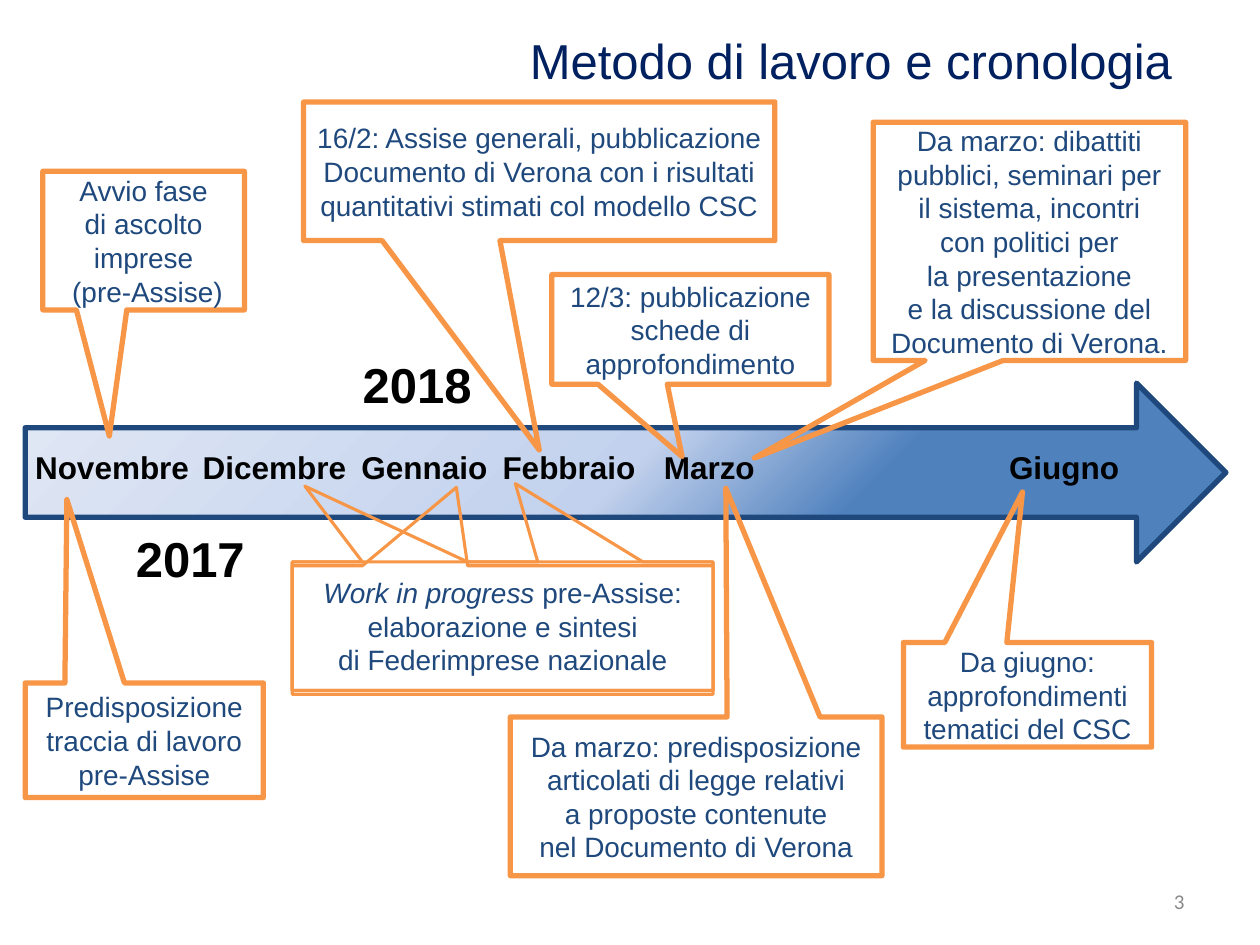
from lxml.etree import SubElement
from pptx import Presentation
from pptx.dml.color import RGBColor
from pptx.enum.shapes import MSO_SHAPE as Shape
from pptx.enum.text import MSO_ANCHOR as Anchor, PP_ALIGN as Align
from pptx.oxml.ns import qn
from pptx.util import Inches, Pt

COLORS = {
    "title": "002060", "text": "1F497D", "callout": "F79646", "black": "000000",
    "number": "898989", "arrow": "4F81BD", "middle": "C2D1ED", "pale": "E1E8F5",
}
GRADIENT = [(31, "arrow"), (50, "middle"), (100, "pale")]
MONTHS = [("Novembre", -0.02), ("Dicembre", 1.31), ("Gennaio", 2.57),
          ("Febbraio", 3.69), ("Marzo", 4.97), ("Giugno", 7.71)]
YEARS = [("2018", 2.58, -0.28), ("2017", 0.78, 1.10)]
WORK_BOX = (2.32, 4.46, 3.34, 1.02)
CALLOUTS = [
    ((0.20, 5.42, 1.89, 0.91), (-0.325, -2.10),
     ["Predisposizione traccia di lavoro", "pre-Assise"]),
    ((0.34, 1.36, 1.60, 1.10), (-0.17, 1.41),
     ["Avvio fase", "di ascolto imprese", " (pre-Assise)"]),
    ((2.41, 0.81, 3.74, 1.10), (0, 2.01),
     ["16/2: Assise generali, pubblicazione Documento di Verona con i risultati "
      "quantitativi stimati col modello CSC"]),
    ((4.38, 2.18, 2.20, 0.87), (-0.03, 1.16),
     ["12/3: pubblicazione schede di approfondimento"]),
    ((4.05, 5.69, 2.95, 1.26), (0.08, -1.94),
     ["Da marzo: predisposizione articolati di legge relativi",
      "a proposte contenute", "nel Documento di Verona"]),
    ((6.93, 0.97, 2.48, 1.89), (-0.88, 0.91),
     ["Da marzo: dibattiti pubblici, seminari per", "il sistema, incontri",
      "con politici per", "la presentazione",
      "e la discussione del Documento di Verona."]),
    ((7.17, 5.10, 1.97, 0.83), (-0.02, -1.94),
     ["Da giugno: approfondimenti tematici del CSC"]),
]


def color(name):
    """Return the named colour of the palette."""
    return RGBColor.from_string(COLORS[name])


def format_paragraph(paragraph, size, color_name, align, bold=False, font="Arial"):
    """Set alignment and font of a whole paragraph."""
    paragraph.alignment = align
    paragraph.font.name = font
    paragraph.font.size = Pt(size)
    paragraph.font.bold = bold
    paragraph.font.color.rgb = color(color_name)


def add_label(slide, box, text, size, color_name="black", align=Align.LEFT,
              bold=True, font="Arial"):
    """Add a single line of text in a box."""
    shape = slide.shapes.add_textbox(*map(Inches, box))
    shape.text_frame.vertical_anchor = Anchor.MIDDLE
    shape.text_frame.word_wrap = True
    paragraph = shape.text_frame.paragraphs[0]
    paragraph.text = text
    format_paragraph(paragraph, size, color_name, align, bold, font)


def add_title(slide, box, text):
    """Place and format the title placeholder."""
    title = slide.shapes.title
    title.left, title.top, title.width, title.height = map(Inches, box)
    title.text_frame.vertical_anchor = Anchor.TOP
    paragraph = title.text_frame.paragraphs[0]
    paragraph.text = text
    format_paragraph(paragraph, 28, "title", Align.RIGHT)


def fill_radial(shape):
    """Fill a shape with a radial gradient centred on its lower right corner."""
    shape.fill.gradient()
    gradient = shape._element.spPr.find(qn("a:gradFill"))
    for child in list(gradient):
        gradient.remove(child)
    stops = SubElement(gradient, qn("a:gsLst"))
    for position, name in GRADIENT:
        stop = SubElement(stops, qn("a:gs"), pos=str(position * 1000))
        SubElement(stop, qn("a:srgbClr"), val=COLORS[name])
    radial = SubElement(gradient, qn("a:path"), path="circle")
    SubElement(radial, qn("a:fillToRect"), l="100000", t="100000")
    SubElement(gradient, qn("a:tileRect"), r="-100000", b="-100000")


def add_timeline(slide, box):
    """Add the arrow with its months inside and its years beside it."""
    left, top, width, height = box
    arrow = slide.shapes.add_shape(Shape.RIGHT_ARROW, *map(Inches, box))
    arrow.shadow.inherit = False
    fill_radial(arrow)
    arrow.line.color.rgb = color("text")
    arrow.line.width = Pt(3)
    for month, offset in MONTHS:
        add_label(slide, (left + offset, top + 0.47, 1.55, 0.40), month, 18)
    for year, across, down in YEARS:
        add_label(slide, (left + across, top + down, 1.26, 0.57), year, 28)


def add_callout(slide, box, tip, lines=(), line_width=3):
    """Add an outlined callout whose tip is a fraction of its size from the centre."""
    shape = slide.shapes.add_shape(Shape.RECTANGULAR_CALLOUT, *map(Inches, box))
    shape.adjustments[0], shape.adjustments[1] = tip
    shape.shadow.inherit = False
    shape.fill.background()
    shape.line.color.rgb = color("callout")
    shape.line.width = Pt(line_width)
    frame = shape.text_frame
    frame.word_wrap = True
    frame.vertical_anchor = Anchor.MIDDLE
    frame.text = "\n".join(lines)
    for paragraph in frame.paragraphs:
        format_paragraph(paragraph, 16, "text", Align.CENTER)
    return shape


def add_work_in_progress(slide, box):
    """Add the shared callout that points to three months."""
    left, top, width, height = box
    shape = add_callout(slide, box, (-0.47, -1.09),
                        ["", "di Federimprese nazionale"], 1.75)
    paragraph = shape.text_frame.paragraphs[0]
    italic_run = paragraph.add_run()
    italic_run.text = "Work in progress "
    italic_run.font.italic = True
    paragraph.add_run().text = "pre-Assise: elaborazione e sintesi"
    add_callout(slide, box, (0.03, -1.11), line_width=1.75)
    add_callout(slide, (left, top + 0.03, width, height), (-0.11, -1.11), line_width=1.75)


def main():
    """Build the chronology slide and save it."""
    presentation = Presentation()
    presentation.slide_width, presentation.slide_height = Inches(10), Inches(7.5)
    slide = presentation.slides.add_slide(presentation.slide_layouts[5])
    add_title(slide, (0.67, 0.19, 8.73, 0.57), "Metodo di lavoro e cronologia")
    add_timeline(slide, (0.20, 3.04, 9.53, 1.42))
    add_work_in_progress(slide, WORK_BOX)
    for box, tip, lines in CALLOUTS:
        add_callout(slide, box, tip, lines)
    add_label(slide, (7.17, 6.95, 2.33, 0.40), "3", 12, "number",
              Align.RIGHT, False, "Calibri")
    presentation.save("out.pptx")


if __name__ == "__main__":
    main()
